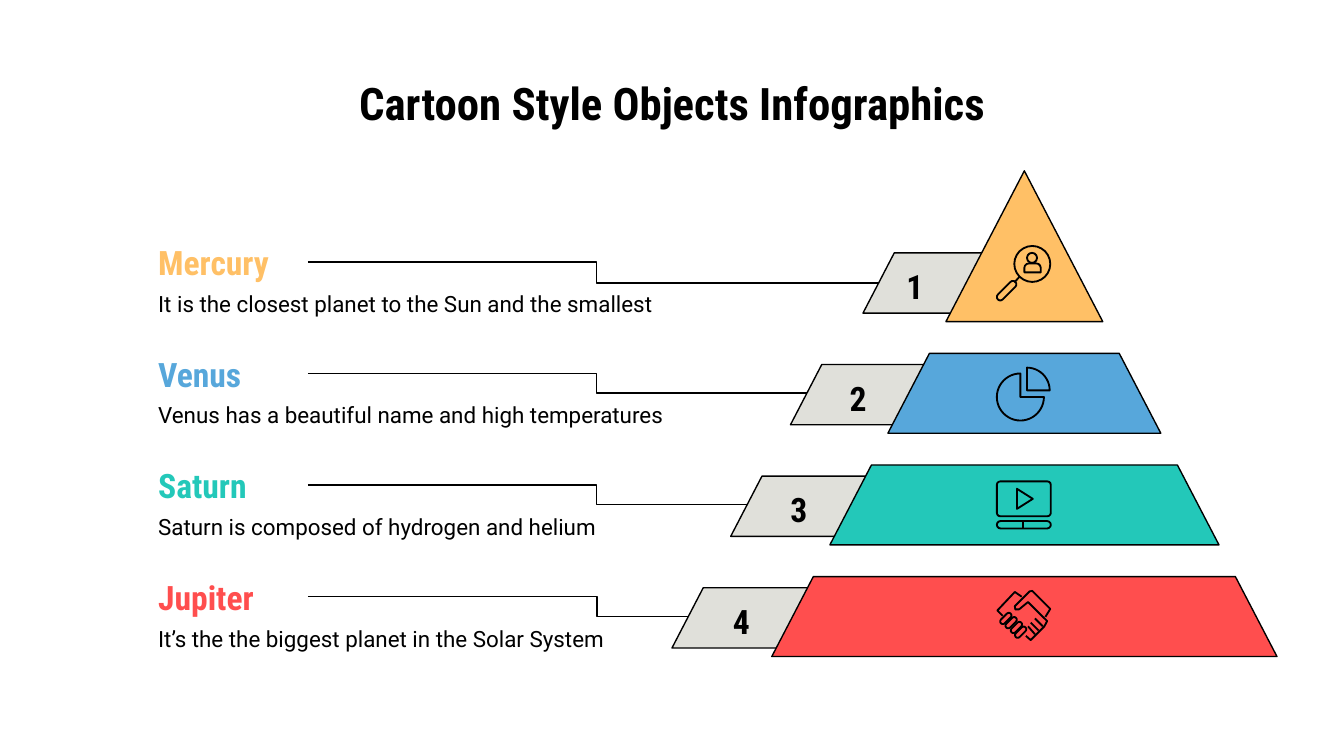
from lxml import etree
from pptx import Presentation
from pptx.dml.color import RGBColor
from pptx.enum.shapes import MSO_CONNECTOR, MSO_SHAPE as SHAPE
from pptx.enum.text import MSO_ANCHOR as ANCHOR, PP_ALIGN as ALIGN
from pptx.oxml.ns import qn
from pptx.util import Cm, Pt

COLORS = {"black": "000000", "tag": "E0E0DA", "yellow": "FFC066",
          "blue": "57A7DB", "teal": "23C8B9", "red": "FF4E4E"}
HEADING_FONT, BODY_FONT = "Roboto Condensed", "Roboto"
TITLE = "Cartoon Style Objects Infographics"

# Icon parts in cm from the icon's corner:
# (preset, left, top, width, height, rotation, adjustments) or a list of points
SEARCH_ICON = [
    (SHAPE.OVAL, 0.36, 0.03, 0.68, 0.68, 0, []),
    (SHAPE.OVAL, 0.6, 0.16, 0.19, 0.19, 0, []),
    (SHAPE.ROUND_2_SAME_RECTANGLE, 0.55, 0.36, 0.31, 0.17, 0, [0.5, 0]),
    (SHAPE.ROUNDED_RECTANGLE, -0.02, 0.81, 0.47, 0.13, -45, [0.5]),
    [(0.36, 0.72), (0.46, 0.61)],
]
PIE_ICON = [
    (SHAPE.PIE, 0.03, 0.15, 0.89, 0.89, 0, []),
    (SHAPE.PIE, 0.17, 0.04, 0.86, 0.86, 0, [162, 0]),
]
SCREEN_ICON = [
    (SHAPE.ROUNDED_RECTANGLE, 0.03, 0.03, 1.02, 0.66, 0, [0.1]),
    (SHAPE.ROUNDED_RECTANGLE, 0.03, 0.78, 1.02, 0.14, 0, [0.5]),
    [(0.53, 0.78), (0.53, 0.92)],
    [(0.41, 0.17), (0.41, 0.55), (0.71, 0.36), (0.41, 0.17)],
]
FINGERS = [(0.2, 0.56), (0.3, 0.64), (0.4, 0.73), (0.48, 0.82)]
HANDSHAKE_ICON = [
    [(0.14, 0.51), (0.04, 0.41), (0.37, 0.06), (0.5, 0.15)],
    [(0.95, 0.53), (1.04, 0.38), (0.7, 0.04), (0.65, 0.05), (0.37, 0.33),
     (0.38, 0.39), (0.45, 0.39), (0.62, 0.25), (0.98, 0.61), (0.93, 0.71),
     (0.85, 0.79), (0.75, 0.89), (0.67, 0.97), (0.58, 0.89)],
    [(0.75, 0.56), (0.9, 0.71)],
    [(0.67, 0.64), (0.82, 0.79)],
    [(0.62, 0.71), (0.75, 0.86)],
] + [(SHAPE.ROUNDED_RECTANGLE, x - 0.13, y - 0.05, 0.26, 0.1, -45, [0.5])
     for x, y in FINGERS]

# name, description, color, tier height, tag left, tag width, number left,
# connector end, connector drop, icon top, icon
LEVELS = [
    ("Mercury", "It is the closest planet to the Sun and the smallest", "yellow",
     2.85, 16.31, 2.97, 16.64, 18.49, 0.4, 4.62, SEARCH_ICON),
    ("Venus", "Venus has a beautiful name and high temperatures", "blue",
     1.51, 14.94, 3.94, 15.57, 16.74, 0.37, 6.91, PIE_ICON),
    ("Saturn", "Saturn is composed of hydrogen and helium", "teal",
     1.51, 13.81, 3.94, 14.45, 15.6, 0.37, 9.07, SCREEN_ICON),
    ("Jupiter", "It’s the the biggest planet in the Solar System", "red",
     1.51, 12.7, 3.94, 13.36, 15.27, 0.37, 11.13, HANDSHAKE_ICON),
]
ROW_PITCH = 2.11
APEX_X, APEX_Y, SLOPE = 19.36, 3.23, 0.52
FIRST_TIER_BOTTOM, FIRST_TAG_TOP, TAG_HEIGHT = 6.08, 4.78, 1.14
TEXT_LEFT, ICON_LEFT = 2.74, 18.81
LINE_START, LINE_BEND, FIRST_LINE_Y = 5.82, 11.28, 4.95


def rgb(name):
    return RGBColor.from_string(COLORS[name])


def style(shape, fill=None, line_width=0.75):
    shape.shadow.inherit = False
    if fill:
        shape.fill.solid()
        shape.fill.fore_color.rgb = rgb(fill)
    else:
        shape.fill.background()
    shape.line.color.rgb = rgb("black")
    shape.line.width = Pt(line_width)


def write(shape, text, size, color, font=HEADING_FONT, bold=True,
          align=ALIGN.LEFT, anchor=ANCHOR.TOP):
    frame = shape.text_frame
    frame.word_wrap = True
    frame.vertical_anchor = anchor
    frame.margin_left = frame.margin_right = Cm(0.25)
    frame.margin_top = frame.margin_bottom = Cm(0.25)
    paragraph = frame.paragraphs[0]
    paragraph.text = text
    paragraph.alignment = align
    paragraph.font.size = Pt(size)
    paragraph.font.name = font
    paragraph.font.bold = bold
    paragraph.font.color.rgb = rgb(color)


def add_text(left, top, width, height, *args, **options):
    box = shapes.add_textbox(Cm(left), Cm(top), Cm(width), Cm(height))
    write(box, *args, **options)


def add_block(preset, left, top, width, height, fill):
    block = shapes.add_shape(preset, Cm(left), Cm(top), Cm(width), Cm(height))
    if preset == SHAPE.TRAPEZOID:
        block.adjustments[0] = SLOPE
    style(block, fill)


def add_elbow(y, end, drop):
    elbow = shapes.add_connector(MSO_CONNECTOR.ELBOW, Cm(LINE_START), Cm(y),
                                 Cm(end), Cm(y + drop))
    elbow.line.color.rgb = rgb("black")
    elbow.line.width = Pt(0.75)
    properties = elbow._element.spPr
    etree.SubElement(properties, qn("a:effectLst"))
    bend = round(100000 * (LINE_BEND - LINE_START) / (end - LINE_START))
    adjustments = properties.find(qn("a:prstGeom")).get_or_add_avLst()
    etree.SubElement(adjustments, qn("a:gd"), name="adj1", fmla=f"val {bend}")


def add_icon(left, top, parts):
    for part in parts:
        if isinstance(part, list):
            points = [(Cm(left + x), Cm(top + y)) for x, y in part]
            builder = shapes.build_freeform(*points[0])
            builder.add_line_segments(points[1:], close=False)
            stroke = builder.convert_to_shape()
        else:
            preset, x, y, width, height, rotation, adjustments = part
            stroke = shapes.add_shape(preset, Cm(left + x), Cm(top + y),
                                      Cm(width), Cm(height))
            stroke.rotation = rotation
            for index, value in enumerate(adjustments):
                stroke.adjustments[index] = value
        style(stroke, line_width=1)


presentation = Presentation()
presentation.slide_width, presentation.slide_height = Cm(25.4), Cm(14.29)
slide = presentation.slides.add_slide(presentation.slide_layouts[5])
shapes = slide.shapes

# Title
title = shapes.title
title.left, title.top, title.width, title.height = Cm(1.27), Cm(1.14), Cm(22.86), Cm(1.6)
write(title, TITLE, 24, "black", align=ALIGN.CENTER, anchor=ANCHOR.MIDDLE)

for row, (name, description, color, tier_height, tag_left, tag_width, number_left,
          line_end, line_drop, icon_top, icon) in enumerate(LEVELS):
    shift = row * ROW_PITCH

    # Connector and number tag
    add_elbow(FIRST_LINE_Y + shift, line_end, line_drop)
    tag_top = FIRST_TAG_TOP + shift
    add_block(SHAPE.TRAPEZOID, tag_left, tag_top, tag_width, TAG_HEIGHT, "tag")

    # Pyramid tier, widening evenly from the apex
    bottom = FIRST_TIER_BOTTOM + shift
    half = SLOPE * (bottom - APEX_Y)
    preset = SHAPE.TRAPEZOID if row else SHAPE.ISOSCELES_TRIANGLE
    add_block(preset, APEX_X - half, bottom - tier_height, 2 * half, tier_height, color)
    add_icon(ICON_LEFT, icon_top, icon)

    # Number, name and description
    add_text(number_left, tag_top, 1.3, TAG_HEIGHT, str(row + 1), 18, "black",
             align=ALIGN.CENTER)
    add_text(TEXT_LEFT, 4.47 + shift, 3.07, 0.97, name, 18, color, anchor=ANCHOR.MIDDLE)
    add_text(TEXT_LEFT, 5.23 + shift, 10.9, 0.97, description, 12, "black",
             font=BODY_FONT, bold=False)

presentation.save("out.pptx")
